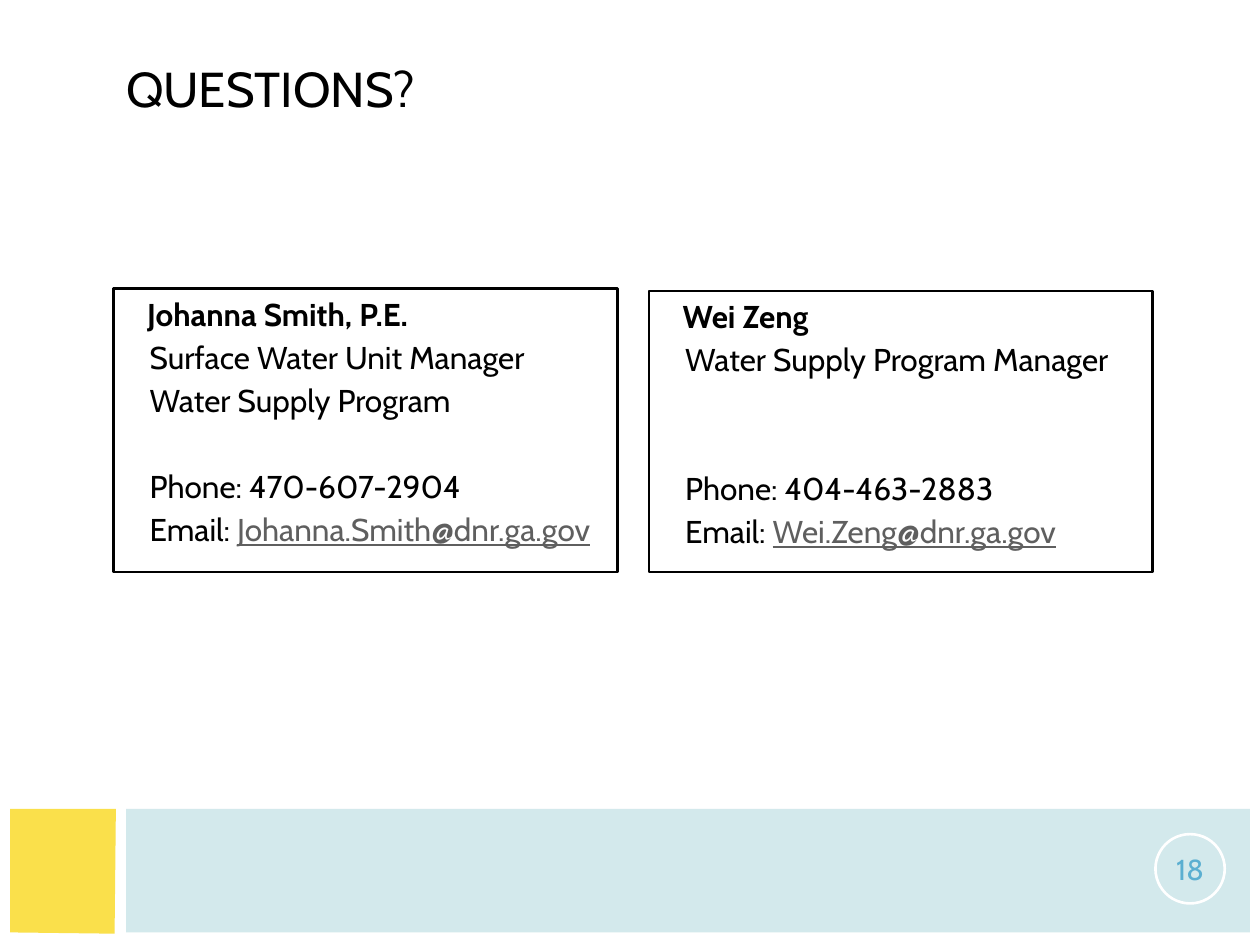
import pptx
import pptx.dml.color
import pptx.enum.shapes
import pptx.enum.text
import pptx.oxml
import pptx.oxml.ns
import pptx.util
from dataclasses import dataclass
from typing import Optional

Inches = pptx.util.Inches
Pt = pptx.util.Pt
RGBColor = pptx.dml.color.RGBColor
Shapes = pptx.enum.shapes.MSO_SHAPE
Align = pptx.enum.text.PP_ALIGN
Anchor = pptx.enum.text.MSO_ANCHOR

FONT = "Cabin"
BLACK = RGBColor(0x00, 0x00, 0x00)
WHITE = RGBColor(0xFF, 0xFF, 0xFF)
YELLOW = RGBColor(0xFA, 0xE0, 0x4B)
PALE_BLUE = RGBColor(0xC8, 0xE4, 0xE8)
NUMBER_BLUE = RGBColor(0x5B, 0xAF, 0xD1)
LINK_GRAY = RGBColor(0x5F, 0x5F, 0x5F)

LINE_HEIGHT = 21.6  # one line of 18 pt text
LINE_GAP = 3
ROLE_LINES = 3  # lines kept free between the name and the phone number


@dataclass
class Contact:
    name: str
    roles: list[str]
    phone: str
    email: str
    left: float
    top: float
    height: float


CONTACTS = [
    Contact("Johanna Smith, P.E.", ["Surface Water Unit Manager", "Water Supply Program"],
            "470-607-2904", "Johanna.Smith@dnr.ga.gov", 0.9, 2.29, 2.25),
    Contact("Wei Zeng", ["Water Supply Program Manager"],
            "404-463-2883", "Wei.Zeng@dnr.ga.gov", 5.15, 2.31, 2.23),
]


def add_run(paragraph, text: str, size: float = 18, color: RGBColor = BLACK,
            bold: bool = False, underline: bool = False) -> None:
    run = paragraph.add_run()
    run.text = text
    run.font.name = FONT
    run.font.size = Pt(size)
    run.font.bold = bold
    run.font.underline = underline
    run.font.color.rgb = color


def add_band(slide, points: list[tuple[int, int]], color: RGBColor,
             opacity: Optional[int] = None) -> None:
    """Draw a closed outline whose points are in hundredths of an inch."""
    builder = slide.shapes.build_freeform(*points[0], scale=Inches(0.01))
    builder.add_line_segments(points[1:], close=True)
    shape = builder.convert_to_shape()
    shape.shadow.inherit = False
    shape.fill.solid()
    shape.fill.fore_color.rgb = color
    shape.line.fill.background()
    if opacity is not None:
        color_element = shape.fill._xPr.find(".//" + pptx.oxml.ns.qn("a:srgbClr"))
        color_element.append(pptx.oxml.parse_xml(
            f'<a:alpha {pptx.oxml.ns.nsdecls("a")} val="{opacity * 1000}"/>'))


def add_outline(slide, kind, left: float, top: float, width: float, height: float,
                color: RGBColor):
    shape = slide.shapes.add_shape(kind, Inches(left), Inches(top),
                                   Inches(width), Inches(height))
    shape.shadow.inherit = False
    shape.fill.background()
    shape.line.color.rgb = color
    shape.line.width = Pt(1.5)
    shape.text_frame.word_wrap = True
    return shape


def add_detail(frame, text: str, blank_lines: int = 0):
    paragraph = frame.add_paragraph()
    paragraph.alignment = Align.LEFT
    properties = paragraph._p.get_or_add_pPr()
    properties.set("marL", str(Inches(0.26)))
    properties.set("indent", str(Inches(-0.07)))
    paragraph.space_before = Pt(LINE_GAP + blank_lines * (LINE_HEIGHT + LINE_GAP))
    add_run(paragraph, text)
    return paragraph


def add_contact(slide, contact: Contact) -> None:
    box = add_outline(slide, Shapes.RECTANGLE, contact.left, contact.top,
                      4, contact.height, BLACK)
    frame = box.text_frame
    frame.vertical_anchor = Anchor.TOP
    heading = frame.paragraphs[0]
    heading.alignment = Align.LEFT
    heading._p.get_or_add_pPr().set("marL", str(Inches(0.17)))
    add_run(heading, contact.name, bold=True)
    for role in contact.roles:
        add_detail(frame, role)
    add_detail(frame, f"Phone: {contact.phone}", ROLE_LINES - len(contact.roles))
    email = add_detail(frame, "Email: ")
    add_run(email, contact.email, color=LINK_GRAY, underline=True)


def main() -> None:
    presentation = pptx.Presentation()
    presentation.slide_width = Inches(10)
    presentation.slide_height = Inches(7.5)
    slide = presentation.slides.add_slide(presentation.slide_layouts[5])

    # Footer bands
    add_band(slide, [(8, 740), (8, 642), (92, 642), (91, 741)], YELLOW)
    add_band(slide, [(100, 740), (100, 642), (992, 642), (992, 740)], PALE_BLUE, 80)

    # Title
    title = slide.shapes.title
    title.left, title.top = Inches(0.9), Inches(0.4)
    title.width, title.height = Inches(8.22), Inches(0.6)
    title.text_frame.auto_size = pptx.enum.text.MSO_AUTO_SIZE.NONE
    title.text_frame.vertical_anchor = Anchor.MIDDLE
    title.text_frame.paragraphs[0].alignment = Align.LEFT
    add_run(title.text_frame.paragraphs[0], "QUESTIONS?", size=28)

    # Contact boxes
    for contact in CONTACTS:
        add_contact(slide, contact)

    # Slide number
    badge = add_outline(slide, Shapes.OVAL, 9.17, 6.62, 0.55, 0.55, WHITE)
    frame = badge.text_frame
    frame.margin_left = frame.margin_right = Inches(0.01)
    frame.margin_top = frame.margin_bottom = Inches(0.01)
    frame.vertical_anchor = Anchor.MIDDLE
    frame.paragraphs[0].alignment = Align.CENTER
    add_run(frame.paragraphs[0], "18", size=16.5, color=NUMBER_BLUE)

    presentation.save("out.pptx")


if __name__ == "__main__":
    main()
